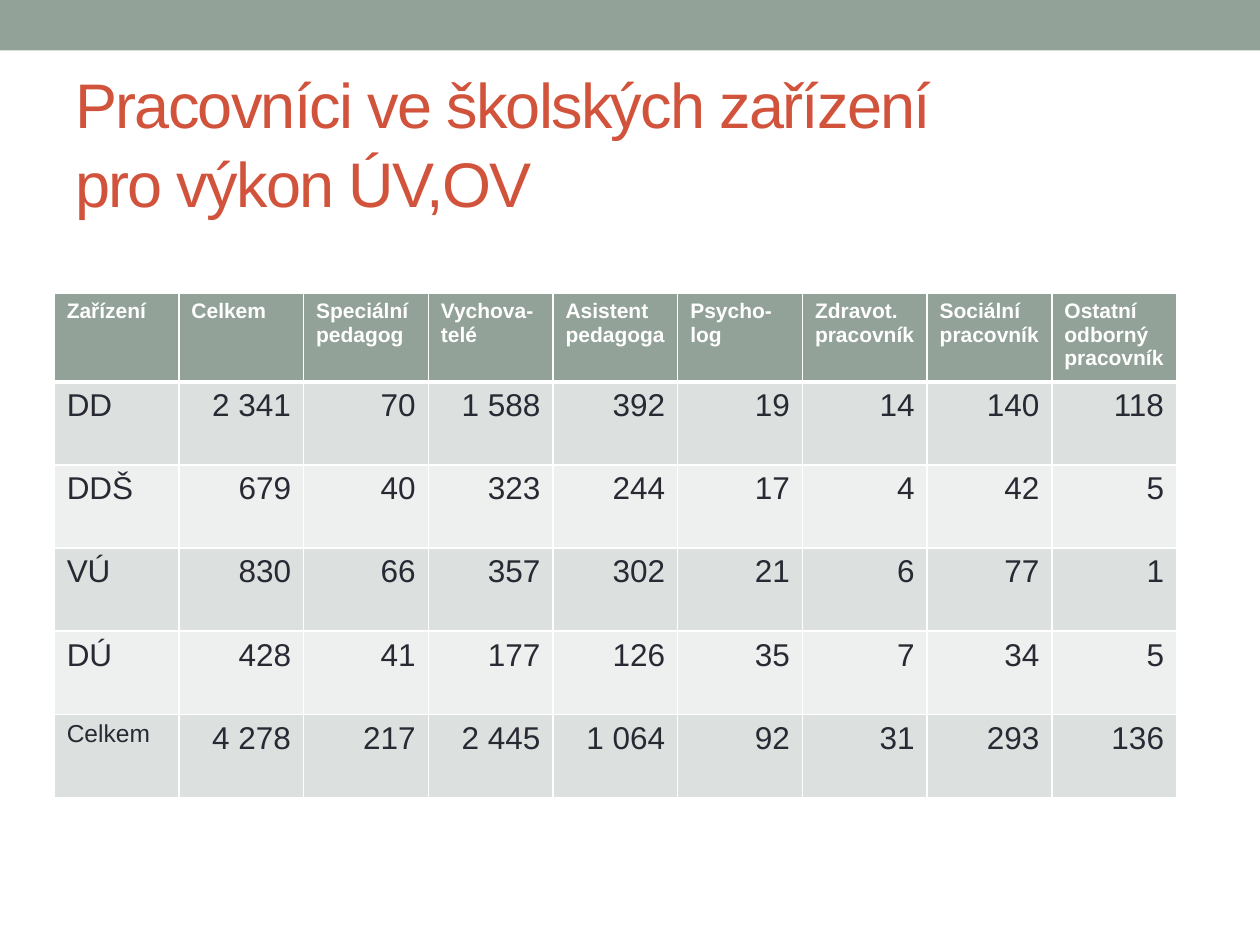
from lxml import etree
from pptx import Presentation
from pptx.dml.color import RGBColor
from pptx.enum.shapes import MSO_SHAPE
from pptx.enum.text import MSO_ANCHOR, PP_ALIGN
from pptx.oxml.ns import qn
from pptx.util import Inches, Pt

RECTANGLE = MSO_SHAPE.RECTANGLE
MIDDLE = MSO_ANCHOR.MIDDLE
LEFT, RIGHT = PP_ALIGN.LEFT, PP_ALIGN.RIGHT

FONT = "Arial"
SAGE, RUST, INK, WHITE = "93A299", "D2533C", "292934", "FFFFFF"
BANDS = ("DCE0DE", "EEF0EF")
COLUMN_WIDTH, ROW_HEIGHT = 0.99, 0.66

HEADINGS = [
    "Zařízení", "Celkem", "Speciální\npedagog", "Vychova-\ntelé",
    "Asistent pedagoga", "Psycho-log", "Zdravot. pracovník",
    "Sociální pracovník", "Ostatní odborný pracovník",
]
STAFF = [
    ["DD", "2 341", "70", "1 588", "392", "19", "14", "140", "118"],
    ["DDŠ", "679", "40", "323", "244", "17", "4", "42", "5"],
    ["VÚ", "830", "66", "357", "302", "21", "6", "77", "1"],
    ["DÚ", "428", "41", "177", "126", "35", "7", "34", "5"],
    ["Celkem", "4 278", "217", "2 445", "1 064", "92", "31", "293", "136"],
]


def rgb(color):
    return RGBColor.from_string(color)


def write_text(frame, text, size, color, bold=False, align=LEFT,
               tracking=None, line_spacing=None):
    """Each newline starts a paragraph; a vertical tab is a line break."""
    frame.word_wrap = True
    frame.text = text
    for paragraph in frame.paragraphs:
        paragraph.alignment = align
        paragraph.line_spacing = line_spacing
        for run in paragraph.runs:
            run.font.name = FONT
            run.font.size = Pt(size)
            run.font.bold = bold
            run.font.color.rgb = rgb(color)
            if tracking is not None:
                run.font._element.set("spc", str(tracking * 100))


def add_band(slide, left, top, width, height, color):
    band = slide.shapes.add_shape(
        RECTANGLE, Inches(left), Inches(top), Inches(width), Inches(height))
    band.shadow.inherit = False
    band.fill.solid()
    band.fill.fore_color.rgb = rgb(color)
    band.line.fill.background()


def add_title(slide, text):
    title = slide.shapes.add_textbox(
        Inches(0.5), Inches(0.58), Inches(9), Inches(1.08))
    title.text_frame.vertical_anchor = MIDDLE
    write_text(title.text_frame, text, 36, RUST, tracking=-1,
               line_spacing=1.05)


def style_cell(cell, fill, top=1, bottom=1):
    """Fill the cell and draw white borders, with widths in points."""
    properties = cell._tc.get_or_add_tcPr()
    for side, width in (("L", 1), ("R", 1), ("T", top), ("B", bottom)):
        border = etree.SubElement(
            properties, qn(f"a:ln{side}"), w=str(Pt(width)))
        solid = etree.SubElement(border, qn("a:solidFill"))
        etree.SubElement(solid, qn("a:srgbClr"), val=WHITE)
    cell.fill.solid()
    cell.fill.fore_color.rgb = rgb(fill)


def add_staff_table(slide, left, top):
    row_count, column_count = len(STAFF) + 1, len(HEADINGS)
    table = slide.shapes.add_table(
        row_count, column_count, Inches(left), Inches(top),
        Inches(COLUMN_WIDTH * column_count),
        Inches(ROW_HEIGHT * row_count)).table
    for column in table.columns:
        column.width = Inches(COLUMN_WIDTH)
    for row in table.rows:
        row.height = Inches(ROW_HEIGHT)

    for c, heading in enumerate(HEADINGS):
        cell = table.cell(0, c)
        style_cell(cell, SAGE, bottom=3)
        write_text(cell.text_frame, heading, 12, WHITE, bold=True)
    for r, values in enumerate(STAFF, start=1):
        for c, value in enumerate(values):
            cell = table.cell(r, c)
            style_cell(cell, BANDS[(r - 1) % 2], top=3 if r == 1 else 1)
            is_total_label = r == len(STAFF) and c == 0
            write_text(cell.text_frame, value, 14 if is_total_label else 18,
                       INK, align=RIGHT if c else LEFT)


def main():
    presentation = Presentation()
    presentation.slide_width = Inches(10)
    presentation.slide_height = Inches(7.5)
    slide = presentation.slides.add_slide(presentation.slide_layouts[6])
    add_band(slide, 0, 0, 10, 0.4, SAGE)
    add_title(slide, "Pracovníci ve školských zařízení \vpro výkon ÚV,OV")
    add_staff_table(slide, 0.43, 2.33)
    presentation.save("out.pptx")


if __name__ == "__main__":
    main()
